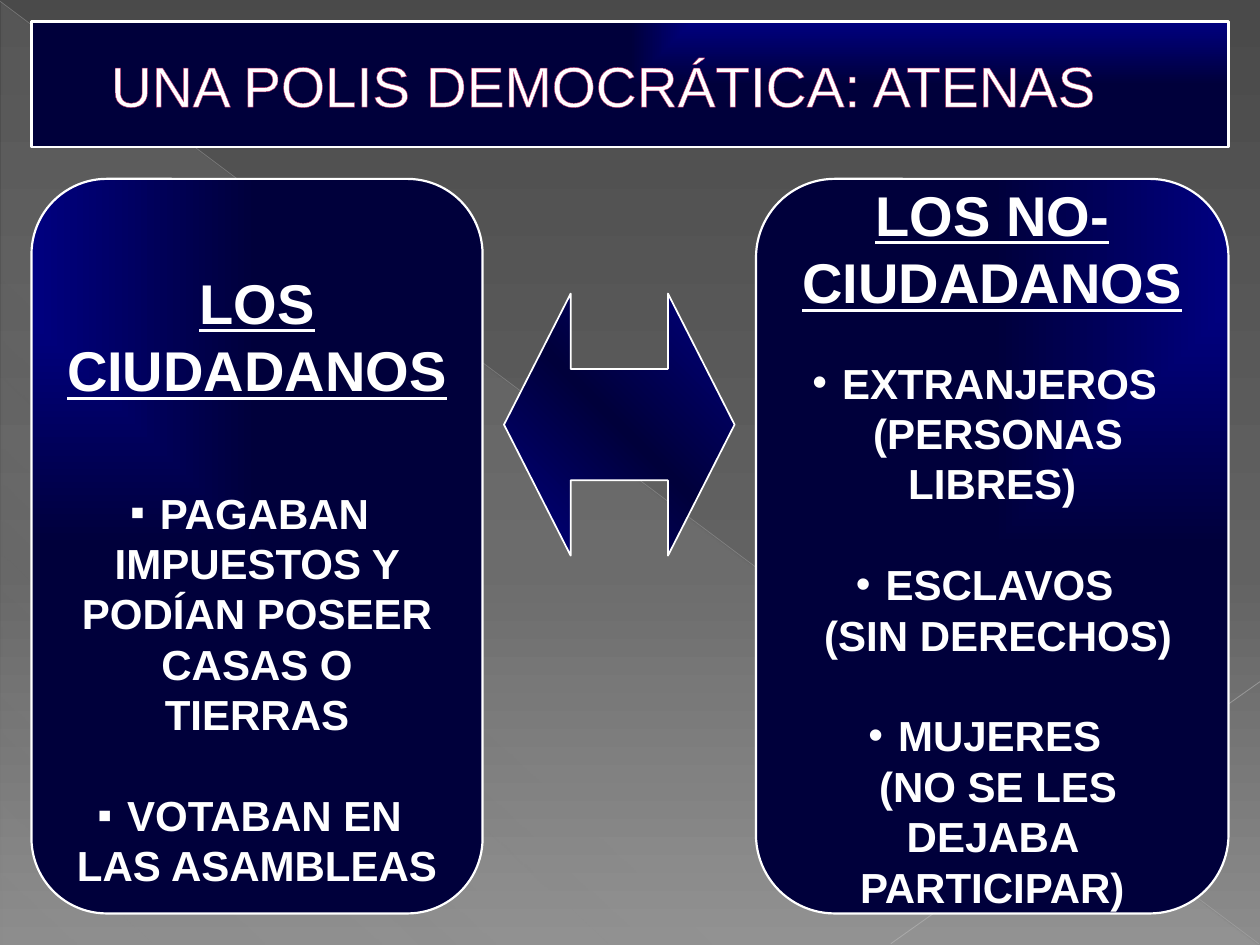
from lxml import etree
from pptx import Presentation
from pptx.dml.color import RGBColor
from pptx.enum.shapes import MSO_CONNECTOR, MSO_SHAPE
from pptx.enum.text import MSO_ANCHOR, PP_ALIGN
from pptx.oxml import parse_xml
from pptx.oxml.ns import nsdecls, qn
from pptx.util import Inches, Pt

WIDE, HIGH = 10, 7.5
EDGE, TOP, TALL = 0.25, 1.42, 5.83
FONT = "Arial"
HEX = {
    "text": "FFFFFF", "navy": "000080", "deep": "00003B", "rim": "B12761",
    "dark": "4A4A4A", "mid": "626262", "pale": "8C8C8C",
    "veil": "D2D2D2", "ray": "BFBFBF", "beam": "C6C6C6",
}
GLOW = [(0, "navy"), (100, "deep")]

# Text, size, bullet, gap above in points
CITY = [
    ("LOS CIUDADANOS", 32, None, 0),
    ("PAGABAN IMPUESTOS Y PODÍAN POSEER CASAS O TIERRAS", 24, "▪", 48),
    ("VOTABAN EN LAS ASAMBLEAS", 24, "▪", 28.8),
]
OTHER = [
    ("LOS NO-CIUDADANOS", 32, None, 0),
    ("EXTRANJEROS", 24, "•", 24),
    (" (PERSONAS LIBRES)", 24, None, 0),
    ("ESCLAVOS", 24, "•", 28.8),
    (" (SIN DERECHOS)", 24, None, 0),
    ("MUJERES", 24, "•", 28.8),
    (" (NO SE LES DEJABA PARTICIPAR)", 24, None, 0),
]


def paint(fill, node, stops, angle=None, focus=None):
    """Fill with a linear gradient, or a rectangular one around a corner."""
    fill.solid()
    marks = ""
    for place, name, *alpha in stops:
        clear = f'<a:alpha val="{alpha[0] * 1000}"/>' if alpha else ""
        marks += (f'<a:gs pos="{place * 1000}"><a:srgbClr val="{HEX[name]}">'
                  f'{clear}</a:srgbClr></a:gs>')
    if focus:
        sides = " ".join(f'{s}="{v * 1000}"' for s, v in zip("ltrb", focus))
        kind = f'<a:path path="rect"><a:fillToRect {sides}/></a:path>'
    else:
        kind = f'<a:lin ang="{angle * 60000}" scaled="0"/>'
    old = node.find(".//" + qn("a:solidFill"))
    old.getparent().replace(old, parse_xml(
        f'<a:gradFill {nsdecls("a")} rotWithShape="1">'
        f'<a:gsLst>{marks}</a:gsLst>{kind}</a:gradFill>'))


def edge(item, width):
    item.line.color.rgb = RGBColor.from_string(HEX["text"])
    item.line.width = Pt(width)


def write(para, text, size, bold=False, under=False, bullet=None, gap=0,
          align=PP_ALIGN.CENTER):
    para.alignment = align
    para.line_spacing = Pt(size * 1.2)
    para.space_before = Pt(gap)
    run = para.add_run()
    run.text = text
    font = run.font
    font.name, font.size = FONT, Pt(size)
    font.bold, font.underline = bold, under
    font.color.rgb = RGBColor.from_string(HEX["text"])
    if bullet:
        props = para._p.get_or_add_pPr()
        etree.SubElement(props, qn("a:buFont")).set("typeface", FONT)
        etree.SubElement(props, qn("a:buChar")).set("char", bullet)
    return run


def shape(slide, kind, left, top, width, height):
    item = slide.shapes.add_shape(
        kind, *(Inches(v) for v in (left, top, width, height)))
    item.shadow.inherit = False
    return item


def ray(slide, start, end, name, width, alpha):
    line = slide.shapes.add_connector(
        MSO_CONNECTOR.STRAIGHT, *(Inches(v) for v in (*start, *end)))
    line.line.color.rgb = RGBColor.from_string(HEX[name])
    line.line.width = Pt(width)
    props = line._element.spPr
    tint = props.find(".//" + qn("a:srgbClr"))
    etree.SubElement(tint, qn("a:alpha")).set("val", str(alpha * 1000))
    etree.SubElement(props, qn("a:effectLst"))


def panel(slide, left, width, focus, rows, inset=0):
    box = shape(slide, MSO_SHAPE.ROUNDED_RECTANGLE, left, TOP, width, TALL)
    paint(box.fill, box._element, GLOW, focus=focus)
    edge(box, 1.25)
    frame = box.text_frame
    frame.word_wrap = True
    frame.vertical_anchor = MSO_ANCHOR.MIDDLE
    frame.margin_top, frame.margin_bottom = Inches(inset), 0
    for i, (text, size, bullet, gap) in enumerate(rows):
        para = frame.add_paragraph() if i else frame.paragraphs[0]
        write(para, text, size, bold=True, under=i == 0, bullet=bullet, gap=gap)


def banner(slide, text):
    title = slide.shapes.title
    title.left, title.top = Inches(EDGE), Inches(0.17)
    title.width, title.height = Inches(WIDE - 2 * EDGE), Inches(1)
    paint(title.fill, title._element, GLOW, focus=(100, 0, 0, 100))
    edge(title, 1.25)
    title.text_frame.vertical_anchor = MSO_ANCHOR.MIDDLE
    para = title.text_frame.paragraphs[0]
    run = write(para, text, 32.4, align=PP_ALIGN.LEFT)
    para._p.get_or_add_pPr().set("marL", str(Inches(0.53)))
    # Thin rim around the letters
    run._r.get_or_add_rPr().insert(0, parse_xml(
        f'<a:ln {nsdecls("a")} w="{Pt(0.5)}"><a:solidFill>'
        f'<a:srgbClr val="{HEX["rim"]}"/></a:solidFill></a:ln>'))
    # Bring the banner in front of the backdrop
    slide.shapes._spTree.append(title._element)


def backdrop(slide):
    paint(slide.background.fill, slide._element,
          [(0, "dark"), (60, "mid"), (100, "pale")], angle=90)
    veil = shape(slide, MSO_SHAPE.RIGHT_TRIANGLE, 0.01, 0.02, 9.98, 7.48)
    paint(veil.fill, veil._element,
          [(0, "veil", 10), (70, "veil", 8), (100, "veil", 1)], angle=133)
    veil.line.fill.background()
    ray(slide, (0, 0.01), (9.99, 7.49), "ray", 0.39, 35)
    ray(slide, (WIDE, 5.41), (7.07, 7.49), "beam", 0.47, 45)


def arrow(slide):
    item = shape(slide, MSO_SHAPE.LEFT_RIGHT_ARROW, 4, 2.33, 1.83, 2.08)
    item.rotation = 180
    item.adjustments[0], item.adjustments[1] = 0.425, 0.289
    paint(item.fill, item._element, GLOW[:1] + [(50, "deep"), (100, "navy")],
          angle=315)
    edge(item, 1)


def main():
    deck = Presentation()
    deck.slide_width, deck.slide_height = Inches(WIDE), Inches(HIGH)
    slide = deck.slides.add_slide(deck.slide_layouts[5])
    backdrop(slide)
    panel(slide, EDGE, 3.58, (0, 0, 100, 100), CITY, inset=0.53)
    panel(slide, 6, 3.75, (100, 0, 0, 100), OTHER)
    arrow(slide)
    banner(slide, "UNA POLIS DEMOCRÁTICA: ATENAS")
    deck.save("out.pptx")


if __name__ == "__main__":
    main()
